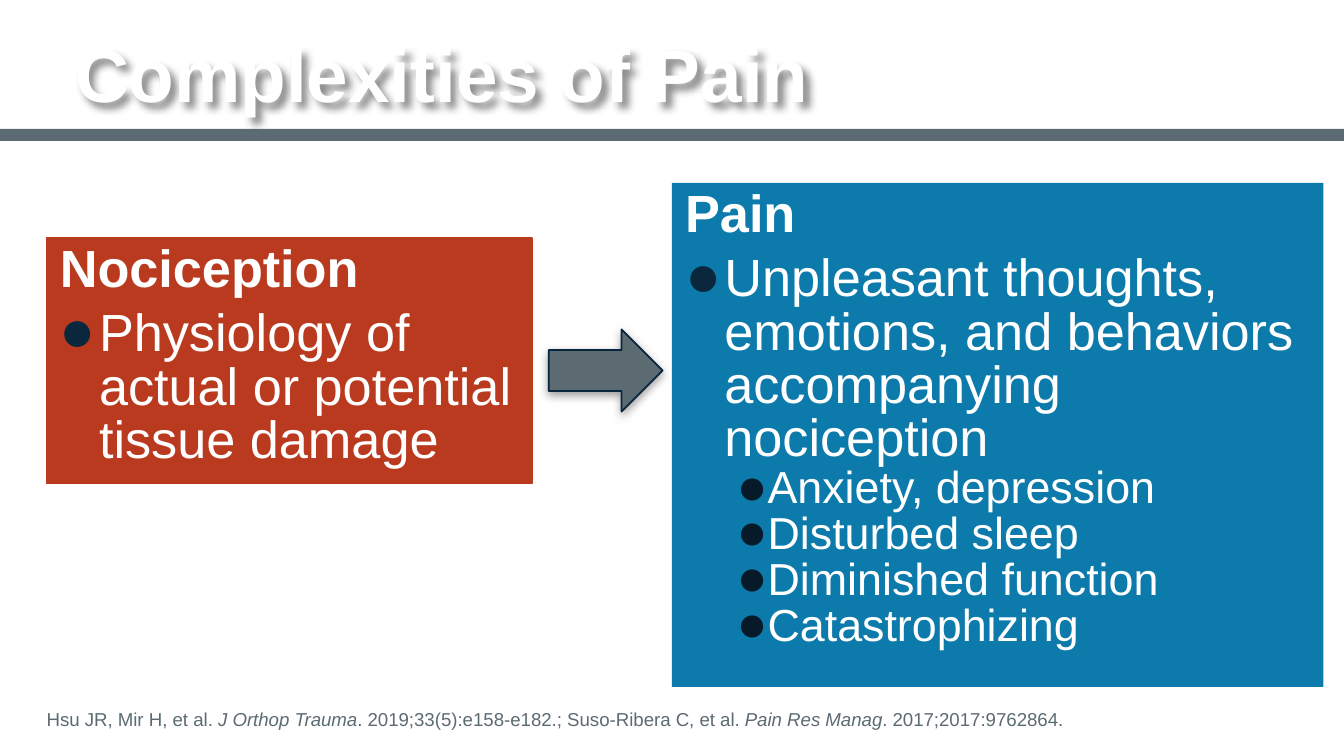
import pptx
import pptx.dml.color
import pptx.enum.shapes
import pptx.enum.text
import pptx.oxml
import pptx.util
from pptx.util import Pt

SHAPES = pptx.enum.shapes.MSO_SHAPE
ANCHORS = pptx.enum.text.MSO_ANCHOR
NAMESPACE = 'xmlns:a="http://schemas.openxmlformats.org/drawingml/2006/main"'
WHITE, SLATE, NAVY = "FFFFFF", "5C6B72", "0A263E"
RED, BLUE = "B93A1E", "0C7AAA"


def color(code):
    return pptx.dml.color.RGBColor.from_string(code)


class SlideBuilder:
    """Holds the text style and current slide, with one method per element."""

    font_name = "Arial"
    line_spacing = 0.85

    def __init__(self, page):
        self.page = page

    def style(self, para, size, code, bold=False, before=0, indent=None, bullet=None):
        para.line_spacing = self.line_spacing
        para.space_before = Pt(before)
        properties = para._p.get_or_add_pPr()
        if indent:
            margin, hanging = indent
            properties.set("marL", str(Pt(margin)))
            properties.set("indent", str(Pt(-hanging)))
        if bullet:
            for markup in (
                f'<a:buClr {NAMESPACE}><a:srgbClr val="{bullet}"/></a:buClr>',
                f'<a:buSzPct {NAMESPACE} val="115000"/>',
                f'<a:buFont {NAMESPACE} typeface="{self.font_name}"/>',
                f'<a:buChar {NAMESPACE} char="●"/>',
            ):
                properties.append(pptx.oxml.parse_xml(markup))
        para.font.name = self.font_name
        para.font.size = Pt(size)
        para.font.bold = bold
        para.font.color.rgb = color(code)

    def place(self, shape, left, top, width, height):
        shape.left, shape.top = Pt(left), Pt(top)
        shape.width, shape.height = Pt(width), Pt(height)

    def shadow(self, shape, code, alpha, blur, distance, degrees):
        shape.shadow.inherit = False
        effects = shape._element.spPr.find(pptx.oxml.ns.qn("a:effectLst"))
        effects.append(pptx.oxml.parse_xml(
            f'<a:outerShdw {NAMESPACE} blurRad="{Pt(blur)}" dist="{Pt(distance)}" '
            f'dir="{degrees * 60000}" algn="ctr" rotWithShape="0">'
            f'<a:srgbClr val="{code}"><a:alpha val="{alpha * 1000}"/></a:srgbClr>'
            '</a:outerShdw>'))

    def title(self, text, *bounds):
        box = self.page.shapes.title
        self.place(box, *bounds)
        frame = box.text_frame
        frame.text = text
        frame.word_wrap = True
        frame.vertical_anchor = ANCHORS.MIDDLE
        para = frame.paragraphs[0]
        para.alignment = pptx.enum.text.PP_ALIGN.LEFT
        self.style(para, 40, WHITE, bold=True)
        self.shadow(box, "000000", 45, 4, 4, 45)

    def shape(self, kind, fill, *bounds, line=None, weight=0.75):
        shape = self.page.shapes.add_shape(kind, *map(Pt, bounds))
        shape.shadow.inherit = False
        shape.fill.solid()
        shape.fill.fore_color.rgb = color(fill)
        if line:
            shape.line.color.rgb = color(line)
            shape.line.width = Pt(weight)
        else:
            shape.line.fill.background()
        return shape

    def panel(self, fill, heading, point, details, *bounds, line=None):
        frame = self.shape(SHAPES.RECTANGLE, fill, *bounds, line=line).text_frame
        frame.word_wrap = True
        frame.vertical_anchor = ANCHORS.TOP
        for index, text in enumerate([heading, point, *details]):
            para = frame.paragraphs[0] if index == 0 else frame.add_paragraph()
            para.text = text
            para.alignment = pptx.enum.text.PP_ALIGN.LEFT
            if index == 0:
                self.style(para, 28, WHITE, bold=True)
            elif index == 1:
                self.style(para, 28, WHITE, before=6, indent=(21, 21), bullet="0B273E")
            else:
                para.level = 1
                self.style(para, 24, WHITE, indent=(44, 16.5), bullet="071A2A")

    def citation(self, spans, *bounds):
        frame = self.page.shapes.add_textbox(*map(Pt, bounds)).text_frame
        frame.word_wrap = True
        frame.vertical_anchor = ANCHORS.BOTTOM
        frame.margin_left, frame.margin_bottom = Pt(25), Pt(18)
        frame.margin_top = frame.margin_right = 0
        para = frame.paragraphs[0]
        self.style(para, 10, SLATE, indent=(20, 20))
        for text, italic in spans:
            span = para.add_run()
            span.text = text
            span.font.italic = italic


def main():
    deck = pptx.Presentation()
    deck.slide_width, deck.slide_height = Pt(720), Pt(405)
    builder = SlideBuilder(deck.slides.add_slide(deck.slide_layouts[5]))
    builder.shape(SHAPES.RECTANGLE, SLATE, 0, 69, 720, 6.5)
    builder.title("Complexities of Pain", 33, 18.5, 654.5, 48)
    builder.panel(RED, "Nociception", "Physiology of actual or potential tissue damage",
                  [], 25, 127.5, 260, 131.5, line=RED)
    builder.panel(BLUE, "Pain",
                  "Unpleasant thoughts, emotions, and behaviors accompanying nociception",
                  ["Anxiety, depression", "Disturbed sleep",
                   "Diminished function", "Catastrophizing"],
                  360, 98, 349, 270)
    builder.citation([("Hsu JR, Mir H, et al. ", False),
                      ("J Orthop Trauma", True),
                      (". 2019;33(5):e158-e182.; Suso-Ribera C, et al. ", False),
                      ("Pain Res Manag", True),
                      (". 2017;2017:9762864.", False)],
                     0, 376.5, 687, 29)
    arrow = builder.shape(SHAPES.RIGHT_ARROW, SLATE, 294, 176.5, 61, 44,
                          line=NAVY, weight=1)
    builder.shadow(arrow, "808080", 75, 5, 2, 90)
    deck.save("out.pptx")


if __name__ == "__main__":
    main()
